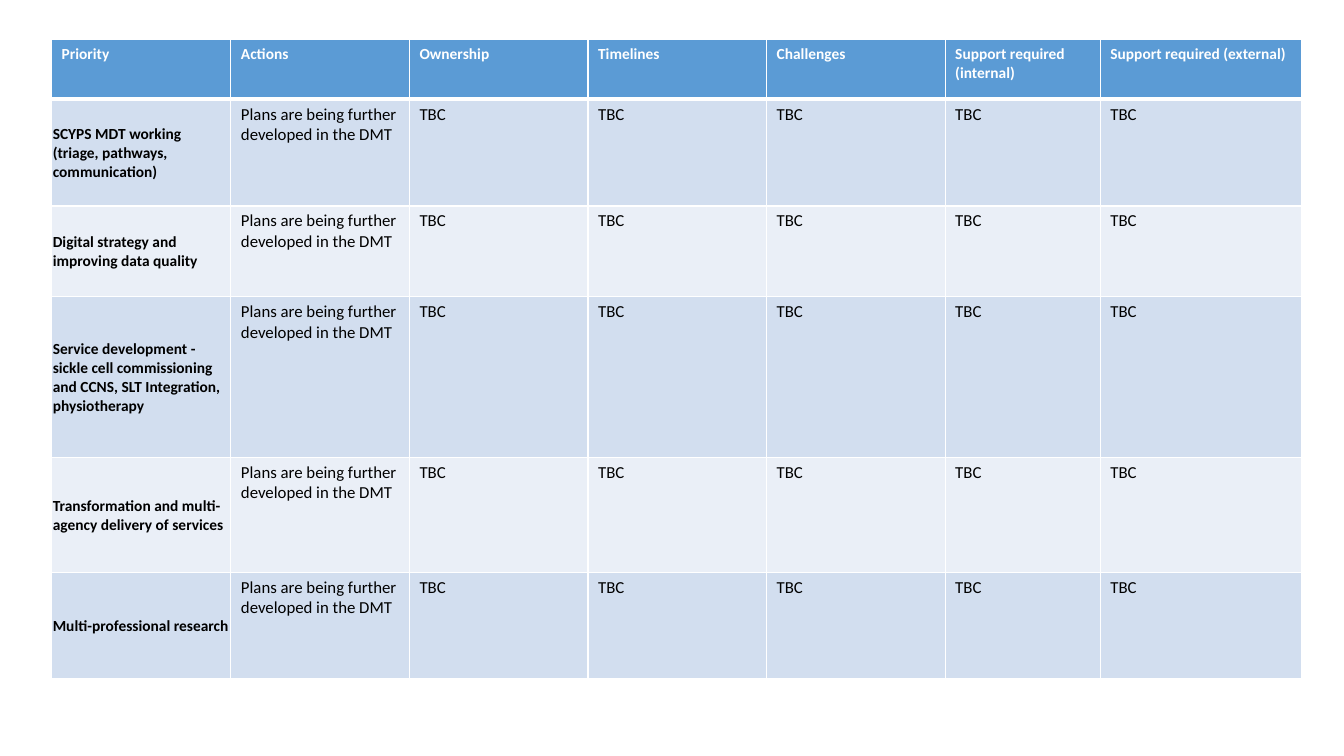
from lxml import etree
from pptx import Presentation
from pptx.dml.color import RGBColor
from pptx.enum.text import MSO_ANCHOR
from pptx.oxml.ns import qn
from pptx.util import Cm, Pt

MIDDLE = MSO_ANCHOR.MIDDLE
TOP = MSO_ANCHOR.TOP
FONT = "Calibri"
WHITE, BLACK, HEADER_BLUE = "FFFFFF", "000000", "5B9BD5"
BANDS = ["D2DEEF", "EAEFF7"]

HEADINGS = [
    "Priority", "Actions", "Ownership", "Timelines", "Challenges",
    "Support required (internal)", "Support required (external)",
]
PRIORITIES = [
    "SCYPS MDT working (triage, pathways, communication)",
    "Digital strategy and improving data quality",
    "Service development - sickle cell commissioning and CCNS, SLT Integration, physiotherapy",
    "Transformation and multi-agency delivery of services",
    "Multi-professional research",
]
ACTION = "Plans are being further developed in the DMT"
PENDING = "TBC"
COLUMN_WIDTHS = [4.52, 4.5, 4.5, 4.5, 4.5, 3.91, 5.08]
ROW_HEIGHTS = [1.5, 2.69, 2.29, 4.04, 2.9, 2.69]


def color(value):
    """Turn a hex string into a colour."""
    return RGBColor.from_string(value)


def add_borders(cell, bottom_width, top_width):
    """Draw white lines around a cell."""
    properties = cell._tc.get_or_add_tcPr()
    widths = {"a:lnL": 1, "a:lnR": 1, "a:lnT": top_width, "a:lnB": bottom_width}
    for tag, width in widths.items():
        line = etree.SubElement(properties, qn(tag), w=str(Pt(width)))
        fill = etree.SubElement(line, qn("a:solidFill"))
        etree.SubElement(fill, qn("a:srgbClr"), val=WHITE)


def fill_cell(cell, text, fill, text_color, size, bold):
    """Write the text of a cell and colour it."""
    cell.fill.solid()
    cell.fill.fore_color.rgb = color(fill)
    cell.text_frame.text = text
    cell.vertical_anchor = TOP
    font = cell.text_frame.paragraphs[0].runs[0].font
    font.name = FONT
    font.size = Pt(size)
    font.bold = bold
    font.color.rgb = color(text_color)


def center_priority(cell):
    """Set a priority cell tight to its edges and centred vertically."""
    cell.vertical_anchor = MIDDLE
    cell.margin_left = cell.margin_right = cell.margin_top = Cm(0.03)
    cell.margin_bottom = Cm(0)


def add_action_plan(slide, left, top):
    """Place the action plan table with its top left corner at the given point."""
    rows = [HEADINGS]
    for priority in PRIORITIES:
        rows.append([priority, ACTION] + [PENDING] * (len(HEADINGS) - 2))
    table = slide.shapes.add_table(
        len(rows), len(HEADINGS), Cm(left), Cm(top),
        Cm(sum(COLUMN_WIDTHS)), Cm(sum(ROW_HEIGHTS)),
    ).table
    for column, width in zip(table.columns, COLUMN_WIDTHS):
        column.width = Cm(width)
    for row, height in zip(table.rows, ROW_HEIGHTS):
        row.height = Cm(height)
    for row_index, texts in enumerate(rows):
        is_header = row_index == 0
        fill = HEADER_BLUE if is_header else BANDS[(row_index - 1) % 2]
        for column_index, text in enumerate(texts):
            cell = table.cell(row_index, column_index)
            is_bold = is_header or column_index == 0
            add_borders(cell, 3 if is_header else 1, 3 if row_index == 1 else 1)
            fill_cell(cell, text, fill, WHITE if is_header else BLACK,
                      11 if is_bold else 12, is_bold)
            if column_index == 0 and not is_header:
                center_priority(cell)


def main():
    """Build the presentation and save it."""
    presentation = Presentation()
    presentation.slide_width = Cm(33.87)
    presentation.slide_height = Cm(19.05)
    slide = presentation.slides.add_slide(presentation.slide_layouts[6])
    add_action_plan(slide, 1.3, 1)
    presentation.save("out.pptx")


if __name__ == "__main__":
    main()
